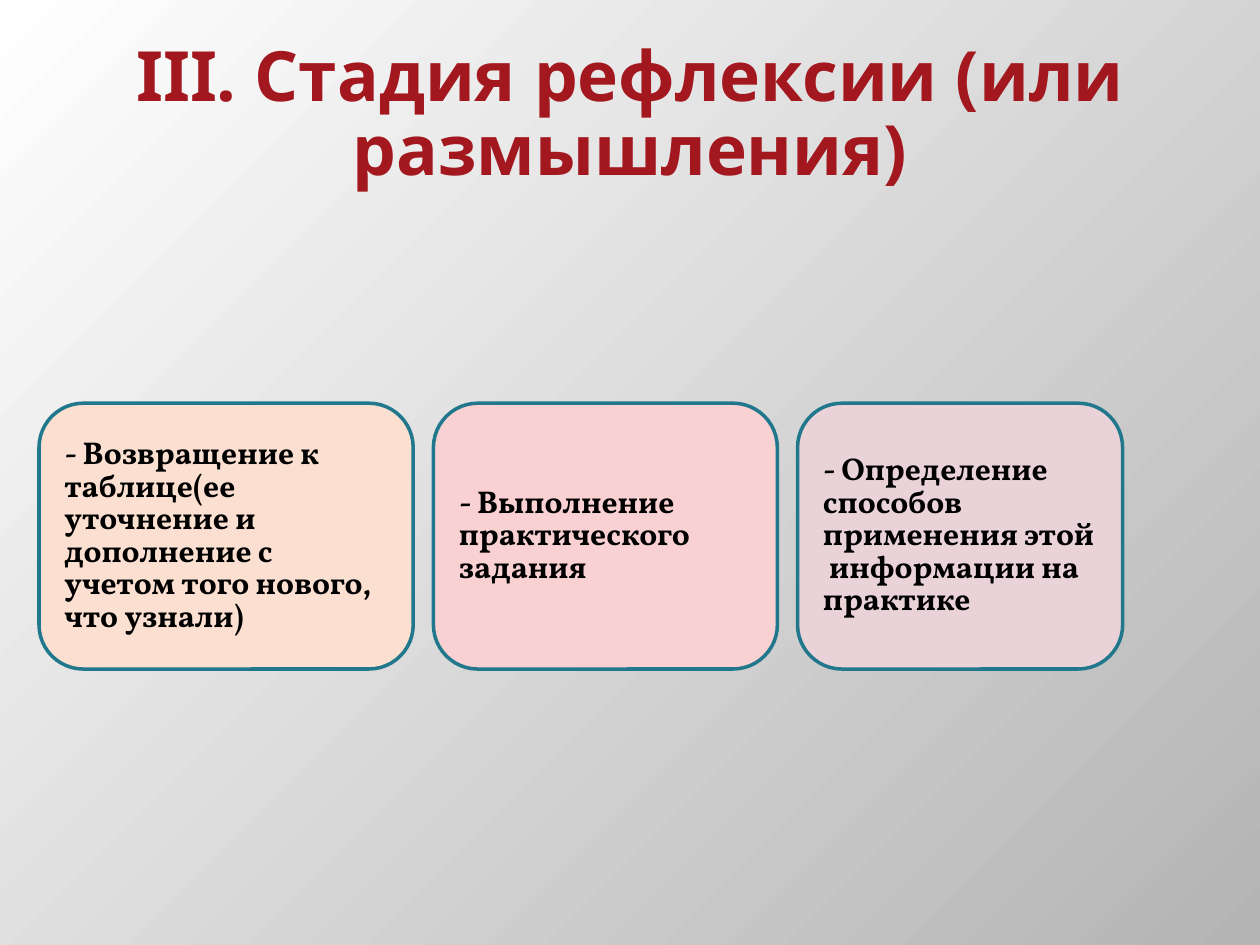
"""Build the slide on the reflection stage with its three activity cards."""
from pptx import Presentation
from pptx import util as u
from pptx.dml.color import RGBColor
from pptx.enum import shapes, text

COLORS = {
    "title": "A3171E", "body": "000000", "border": "21788D",
    "light": "FFFFFF", "shade": "B4B4B4",
    "peach": "FBE0D1", "pink": "F9D1D3", "mauve": "EAD3D8",
}
WIDTH, HEIGHT = 10, 7.5
CARD_LEFT, CARD_TOP, CARD_HEIGHT, CARD_GAP = 0.31, 3.2, 2.11, 0.16
CARDS = [
    (2.97, "peach", "- Возвращение к таблице(ее уточнение и дополнение с учетом того нового, что узнали)"),
    (2.73, "pink", "- Выполнение практического задания"),
    (2.58, "mauve", "- Определение способов применения этой  информации на практике"),
]


def color(name):
    """Return the palette colour with this name."""
    return RGBColor.from_string(COLORS[name])


def write(box, words, font, size, ink, align, spacing):
    """Put one bold, vertically centred paragraph into a shape."""
    frame = box.text_frame
    frame.word_wrap = True
    frame.auto_size = text.MSO_AUTO_SIZE.NONE
    frame.vertical_anchor = text.MSO_ANCHOR.MIDDLE
    para = frame.paragraphs[0]
    para.alignment = align
    para.line_spacing = spacing
    span = para.add_run()
    span.text = words
    span.font.name = font
    span.font.size = u.Pt(size)
    span.font.bold = True
    span.font.color.rgb = color(ink)


def paint_background(page):
    """Shade the page diagonally from the top left corner."""
    fill = page.background.fill
    fill.gradient()
    fill.gradient_angle = 315
    for stop, name in zip(fill.gradient_stops, ("light", "shade")):
        stop.color.rgb = color(name)


def set_title(page, words):
    """Place and fill the title placeholder."""
    title = page.shapes.title
    title.left, title.top = u.Inches(0.05 * WIDTH), u.Inches(0.04 * HEIGHT)
    title.width, title.height = u.Inches(0.9 * WIDTH), u.Inches(1.25)
    write(title, words, "Noto Sans", 39.6, "title", text.PP_ALIGN.CENTER, 0.88)


def add_card(page, left, width, fill, words):
    """Add a rounded card with left-aligned wording."""
    card = page.shapes.add_shape(
        shapes.MSO_SHAPE.ROUNDED_RECTANGLE,
        u.Inches(left), u.Inches(CARD_TOP), u.Inches(width), u.Inches(CARD_HEIGHT))
    card.shadow.inherit = False
    card.fill.solid()
    card.fill.fore_color.rgb = color(fill)
    card.line.color.rgb = color("border")
    card.line.width = u.Pt(2)
    write(card, words, "Vollkorn", 18, "body", text.PP_ALIGN.LEFT, 0.86)


def main():
    """Build and save the deck."""
    deck = Presentation()
    deck.slide_width, deck.slide_height = u.Inches(WIDTH), u.Inches(HEIGHT)
    page = deck.slides.add_slide(deck.slide_layouts.get_by_name("Title Only"))
    paint_background(page)
    set_title(page, "III. Стадия рефлексии (или размышления)")
    left = CARD_LEFT
    for width, fill, words in CARDS:
        add_card(page, left, width, fill, words)
        left += width + CARD_GAP
    deck.save("out.pptx")


if __name__ == "__main__":
    main()
